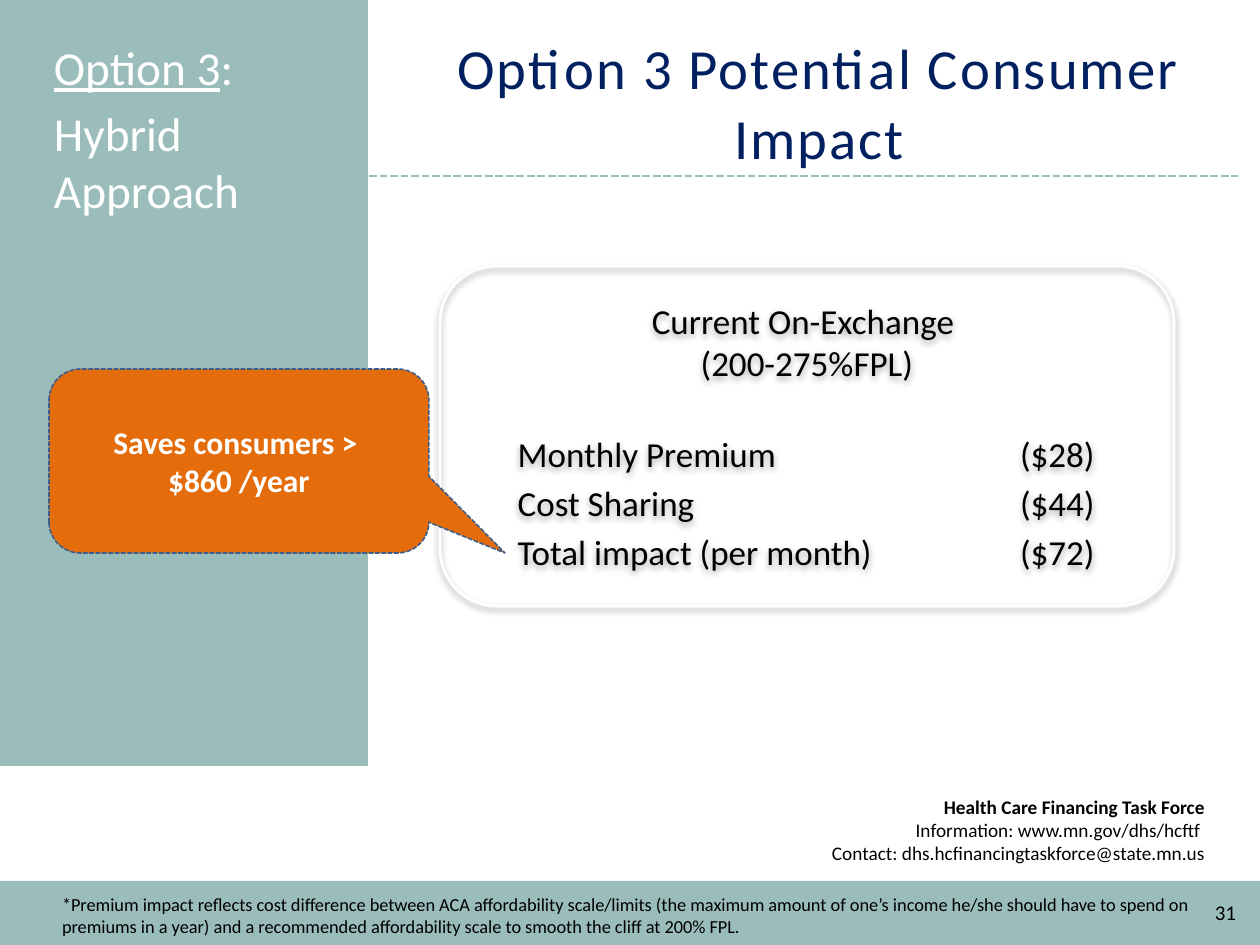
import pptx
import pptx.dml.color
import pptx.enum.dml
import pptx.enum.shapes
import pptx.enum.text
import pptx.oxml
import pptx.oxml.ns
import pptx.util

SHAPE = pptx.enum.shapes.MSO_SHAPE
ALIGN = pptx.enum.text.PP_ALIGN
ANCHOR = pptx.enum.text.MSO_ANCHOR
DASH = pptx.enum.dml.MSO_LINE.SQUARE_DOT
NS = pptx.oxml.ns.nsdecls("a")
TEAL, WHITE, BLACK, NAVY = "9ABCBB", "FFFFFF", "000000", "002060"


def px(n):
    return pptx.util.Emu(round(n * 914400 / 126))


def rgb(value):
    return pptx.dml.color.RGBColor.from_string(value)


def write(p, text, size=20, color=BLACK, bold=False, underline=False,
          align=ALIGN.LEFT, before=0, leading=None, tracking=0, tab=None):
    if tab:
        p._p.get_or_add_pPr().append(pptx.oxml.parse_xml(
            f'<a:tabLst {NS}><a:tab pos="{px(tab)}" algn="r"/></a:tabLst>'))
    p.alignment = align
    p.space_before = pptx.util.Pt(before)
    if leading:
        p.line_spacing = pptx.util.Pt(leading)
    r = p.add_run()
    r.text = text
    r.font.name = "Calibri"
    r.font.size = pptx.util.Pt(size)
    r.font.color.rgb = rgb(color)
    r.font.bold = bold
    r.font.underline = underline
    if tracking:
        r._r.get_or_add_rPr().set("spc", str(round(tracking * 100)))


class Deck:
    """Holds the style and the current slide."""

    def __init__(self):
        self.prs = pptx.Presentation()
        self.prs.slide_width, self.prs.slide_height = px(1260), px(945)
        self.s = self.prs.slides.add_slide(self.prs.slide_layouts[6])

    def frame(self, sp, paragraphs, anchor=ANCHOR.TOP, inset=13, **style):
        tf = sp.text_frame
        tf.word_wrap = True
        tf.vertical_anchor = anchor
        tf.margin_left = tf.margin_right = px(inset)
        for i, (text, extra) in enumerate(paragraphs):
            p = tf.paragraphs[0] if i == 0 else tf.add_paragraph()
            write(p, text, **{**style, **extra})
        return tf

    def text(self, box, paragraphs, **style):
        sp = self.s.shapes.add_textbox(*map(px, box))
        return self.frame(sp, paragraphs, **style)

    def shape(self, box, kind=SHAPE.RECTANGLE, fill=None, line=None, width=1,
              dash=None):
        sp = self.s.shapes.add_shape(kind, *map(px, box))
        sp.shadow.inherit = False
        if fill:
            sp.fill.solid()
            sp.fill.fore_color.rgb = rgb(fill)
        else:
            sp.fill.background()
        if line:
            sp.line.color.rgb = rgb(line)
            sp.line.width = pptx.util.Pt(width)
            sp.line.dash_style = dash
        else:
            sp.line.fill.background()
        return sp

    def rule(self, x1, x2, y):
        c = self.s.shapes.add_connector(
            pptx.enum.shapes.MSO_CONNECTOR.STRAIGHT, px(x1), px(y), px(x2), px(y))
        c.line.color.rgb = rgb(TEAL)
        c.line.width = pptx.util.Pt(1.5)
        c.line.dash_style = DASH
        c._element.spPr.append(pptx.oxml.parse_xml(f"<a:effectLst {NS}/>"))

    def drop_shadow(self, sp):
        effects = sp._element.spPr.find(pptx.oxml.ns.qn("a:effectLst"))
        effects.append(pptx.oxml.parse_xml(
            f'<a:outerShdw {NS} blurRad="50800" dist="25400" dir="5400000" '
            'rotWithShape="0"><a:srgbClr val="000000"><a:alpha val="35000"/>'
            '</a:srgbClr></a:outerShdw>'))


def main():
    deck = Deck()
    deck.shape((0, 881, 1260, 64), fill=TEAL)
    deck.rule(22, 1238, 176)
    contact = deck.shape((572, 789, 646, 84), fill=WHITE)
    deck.frame(contact, [
        ("Health Care Financing Task Force", {"bold": True}),
        ("Information: www.mn.gov/dhs/hcftf ", {}),
        ("Contact: dhs.hcfinancingtaskforce@state.mn.us", {}),
    ], size=11, align=ALIGN.RIGHT)

    deck.shape((0, 0, 368, 766), fill=TEAL)
    panel = deck.text((41, 32, 305, 703), [
        ("Option 3", {"underline": True}),
        ("Hybrid Approach", {"before": 5.4}),
    ], size=27, color=WHITE)
    write(panel.paragraphs[0], ":", size=27, color=WHITE)
    deck.text((420, 32, 798, 145), [("Option 3 Potential Consumer Impact", {})],
              anchor=ANCHOR.BOTTOM, size=32.4, color=NAVY, align=ALIGN.CENTER,
              leading=40, tracking=1.2)

    impact = deck.shape((440, 266, 734, 340), SHAPE.ROUNDED_RECTANGLE,
                        line=WHITE, width=1.57)
    deck.drop_shadow(impact)
    rows = [("Monthly Premium", "($28)"), ("Cost Sharing", "($44)"),
            ("Total impact (per month)", "($72)")]
    heading = [(text, {"align": ALIGN.CENTER})
               for text in ("Current On-Exchange ", "(200-275%FPL)")]
    deck.frame(impact, heading + [
        (f"{label}\t{amount}", {"tab": 577, "before": 4 if i else 28})
        for i, (label, amount) in enumerate(rows)
    ], anchor=ANCHOR.MIDDLE, inset=61)

    callout = deck.shape((49, 369, 380, 184), SHAPE.ROUNDED_RECTANGULAR_CALLOUT,
                         fill="E46C0A", line="3A5F8C", width=0.9, dash=DASH)
    for i, value in enumerate((0.7, 0.5, 0.17)):
        callout.adjustments[i] = value
    deck.frame(callout, [("Saves consumers > ", {}), ("$860 /year", {})],
               anchor=ANCHOR.MIDDLE, size=18, color=WHITE, bold=True,
               align=ALIGN.CENTER)

    deck.text((49, 843, 1201, 100), [(
        "*Premium impact reflects cost difference between ACA affordability "
        "scale/limits (the maximum amount of one’s income he/she should have to "
        "spend on premiums in a year) and a recommended affordability scale to "
        "smooth the cliff at 200% FPL.", {})], anchor=ANCHOR.BOTTOM, size=10.5)
    deck.text((1176, 887, 73, 50), [("31", {})], anchor=ANCHOR.MIDDLE, size=12,
              align=ALIGN.RIGHT)
    deck.prs.save("out.pptx")


if __name__ == "__main__":
    main()
